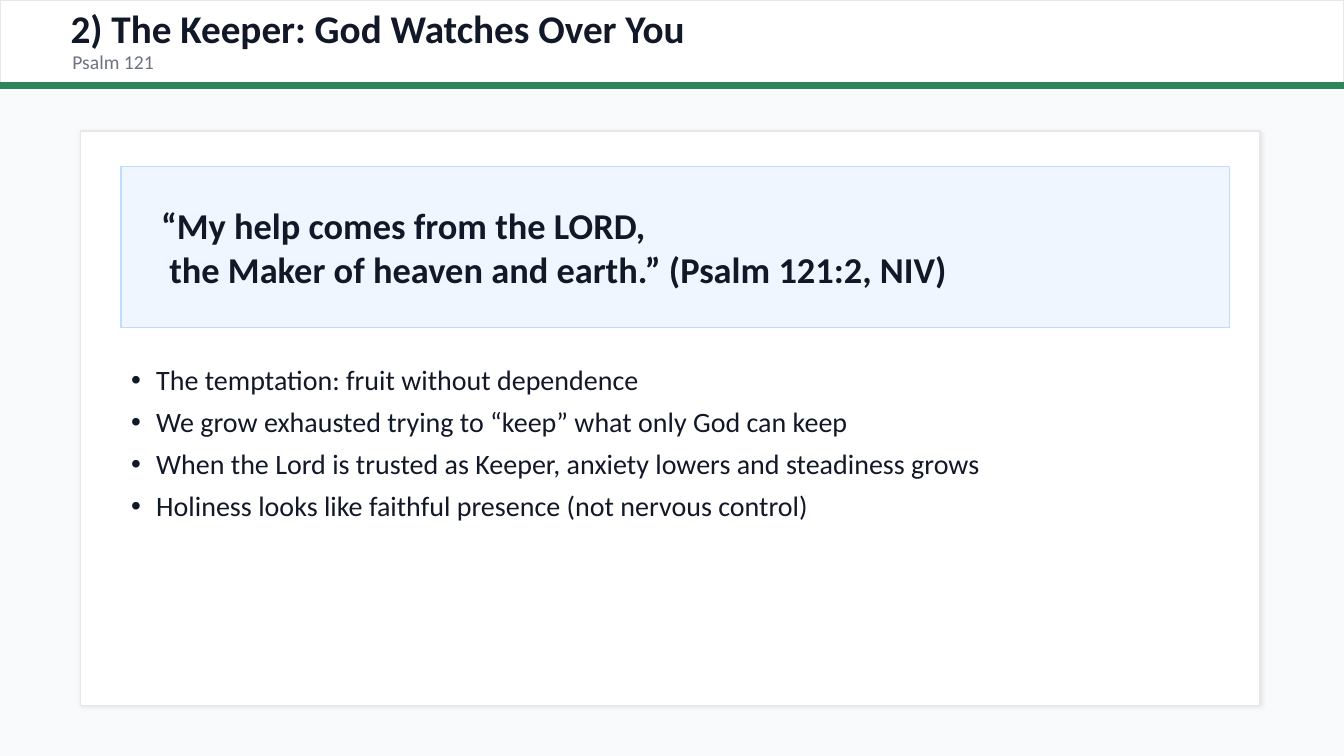
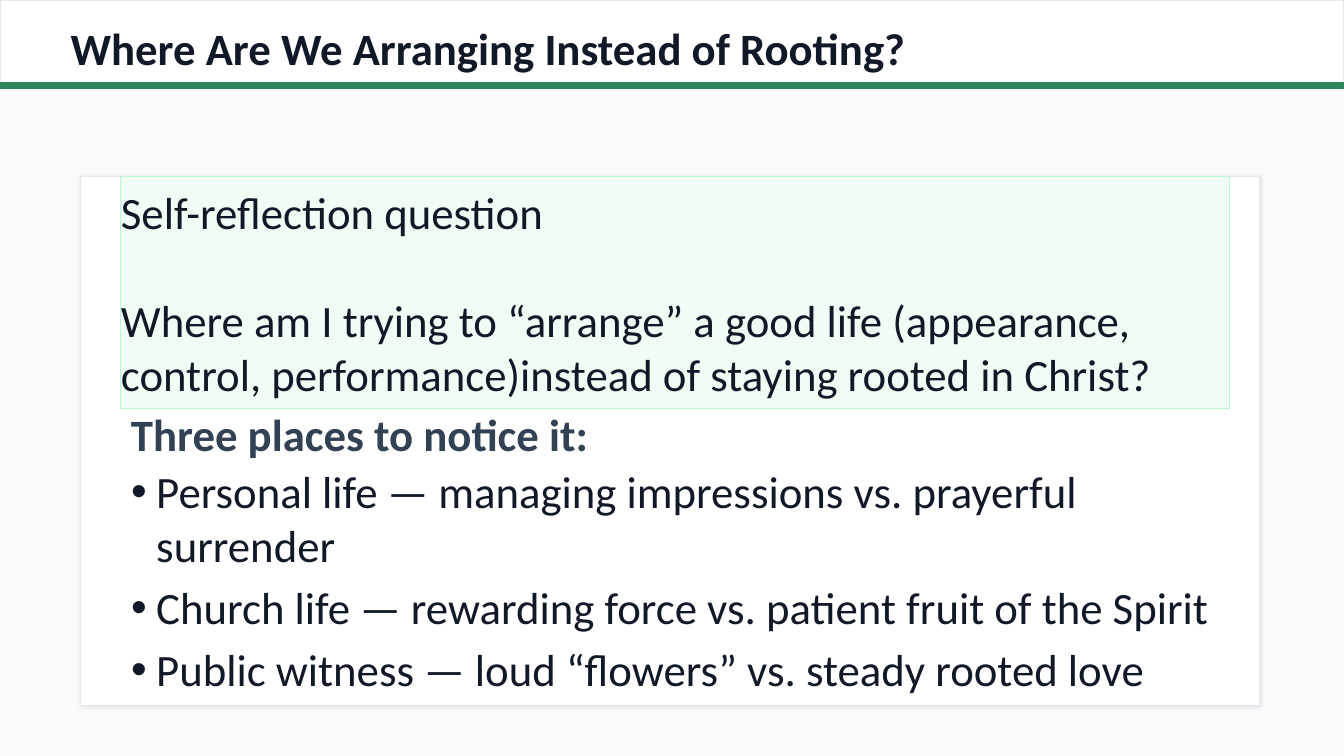
from lxml import etree
from pptx import Presentation
from pptx.dml.color import RGBColor
from pptx.enum.shapes import MSO_SHAPE
from pptx.enum.text import MSO_ANCHOR, MSO_AUTO_SIZE, PP_ALIGN
from pptx.oxml.ns import qn
from pptx.util import Pt

RECT = MSO_SHAPE.RECTANGLE
TOP, MIDDLE = MSO_ANCHOR.TOP, MSO_ANCHOR.MIDDLE
NO_FIT = MSO_AUTO_SIZE.NONE
LEFT = PP_ALIGN.LEFT

FONT = "Calibri"
WHITE = RGBColor(0xFF, 0xFF, 0xFF)
PAGE = RGBColor(0xF8, 0xFA, 0xFC)
BORDER = RGBColor(0xE5, 0xE7, 0xEB)
GREEN = RGBColor(0x2F, 0x85, 0x5A)
INK = RGBColor(0x11, 0x18, 0x27)
SLATE = RGBColor(0x33, 0x41, 0x55)
GREY = RGBColor(0x6B, 0x72, 0x80)
BLUE_TINT = RGBColor(0xEF, 0xF6, 0xFF)
BLUE_EDGE = RGBColor(0xBF, 0xDB, 0xFE)
GREEN_TINT = RGBColor(0xF0, 0xFD, 0xF4)
GREEN_EDGE = RGBColor(0xBB, 0xF7, 0xD0)

# Lengths in points
SLIDE_W, SLIDE_H = 960, 540
HEADER_H, RULE_H = 59, 4.3
CARD_X, CARD_W, CARD_BOTTOM = 57.6, 842.4, 504
INNER_X, INNER_W = 86.4, 792
BULLET_INDENT = 18
SPACE_WIDTH = 5.9
BLANK_LINE = 39

KEEPER = {
    "title": "2) The Keeper: God Watches Over You",
    "subtitle": "Psalm 121",
    "verse": ["“My help comes from the LORD,",
              "the Maker of heaven and earth.” (Psalm 121:2, NIV)"],
    "bullets": [
        "The temptation: fruit without dependence",
        "We grow exhausted trying to “keep” what only God can keep",
        "When the Lord is trusted as Keeper, anxiety lowers and steadiness grows",
        "Holiness looks like faithful presence (not nervous control)",
    ],
}
REFLECTION = {
    "title": "Where Are We Arranging Instead of Rooting?",
    "question": [
        "Self-reflection question",
        "Where am I trying to “arrange” a good life (appearance, control, "
        "performance)instead of staying rooted in Christ?",
    ],
    "heading": "Three places to notice it:",
    "bullets": [
        "Personal life — managing impressions vs. prayerful surrender",
        "Church life — rewarding force vs. patient fruit of the Spirit",
        "Public witness — loud “flowers” vs. steady rooted love",
    ],
}


def place(sp, x, y, w, h):
    sp.left, sp.top, sp.width, sp.height = Pt(x), Pt(y), Pt(w), Pt(h)


def set_text(sp, lines, size, color=INK, bold=False, anchor=MIDDLE):
    tf = sp.text_frame
    tf.text = "\n".join(lines)
    tf.word_wrap = True
    tf.auto_size = NO_FIT
    tf.vertical_anchor = anchor
    for p in tf.paragraphs:
        p.alignment = LEFT
        p.space_before = Pt(0)
        for r in p.runs:
            r.font.name = FONT
            r.font.size = Pt(size)
            r.font.bold = bold
            r.font.color.rgb = color
    return tf


def set_indent(p, left, first=0):
    pPr = p._p.get_or_add_pPr()
    pPr.set("marL", str(Pt(left)))
    pPr.set("indent", str(Pt(first)))


def add_rect(s, x, y, w, h, fill, line, line_width=1):
    sp = s.shapes.add_shape(RECT, Pt(x), Pt(y), Pt(w), Pt(h))
    sp.shadow.inherit = False
    sp.fill.solid()
    sp.fill.fore_color.rgb = fill
    sp.line.color.rgb = line
    sp.line.width = Pt(line_width)
    return sp


def add_text(s, x, y, w, h, lines, size, **style):
    sp = s.shapes.add_textbox(Pt(x), Pt(y), Pt(w), Pt(h))
    return set_text(sp, lines, size, **style)


def add_card(s, top):
    """White panel with a soft shadow, reaching down to the common bottom edge."""
    sp = add_rect(s, CARD_X, top, CARD_W, CARD_BOTTOM - top, WHITE, BORDER)
    effects = sp.element.spPr.find(qn("a:effectLst"))
    shadow = etree.SubElement(effects, qn("a:outerShdw"), blurRad=str(Pt(3)),
                              dist=str(Pt(1)), dir=str(45 * 60000))
    color = etree.SubElement(shadow, qn("a:srgbClr"), val="000000")
    etree.SubElement(color, qn("a:alpha"), val="10000")


def set_title(s, text, size, height):
    place(s.shapes.title, 43.2, 10, 873.4, height)
    set_text(s.shapes.title, [text], size, bold=True)


def set_bullets(s, lines, size, top, height):
    body = s.placeholders[1]
    place(body, INNER_X, top, INNER_W, height)
    for p in set_text(body, lines, size, anchor=TOP).paragraphs:
        set_indent(p, BULLET_INDENT, -BULLET_INDENT)
        p.space_after = Pt(6)
    body.element.getparent().append(body.element)  # in front of the card


def add_header_to_layout(layout, s):
    """Draw the header bands on s, then move them behind the layout's placeholders."""
    layout.background.fill.solid()
    layout.background.fill.fore_color.rgb = PAGE
    bands = [add_rect(s, 0, 0, SLIDE_W, HEADER_H, WHITE, BORDER),
             add_rect(s, 0, HEADER_H, SLIDE_W, RULE_H, GREEN, GREEN)]
    for i, sp in enumerate(bands):
        sp.element.nvSpPr.cNvPr.set("id", str(100 + i))
        layout.shapes.element.insert(2 + i, sp.element)


def build_keeper(s):
    set_title(s, KEEPER["title"], 28, 20.2)
    add_text(s, 44.6, 33.1, 870.5, 21.6, [KEEPER["subtitle"]], 14, color=GREY)
    add_card(s, 93.6)
    add_rect(s, INNER_X, 118.8, INNER_W, 115.2, BLUE_TINT, BLUE_EDGE)
    verse = add_text(s, 108, 133.2, 748.8, 86.4, KEEPER["verse"], 26, bold=True)
    set_indent(verse.paragraphs[1], SPACE_WIDTH)
    set_bullets(s, KEEPER["bullets"], 20, 255.6, 237.6)


def build_reflection(s):
    set_title(s, REFLECTION["title"], 32, 47.5)
    add_card(s, 126)
    box = add_rect(s, INNER_X, 126, INNER_W, 165.6, GREEN_TINT, GREEN_EDGE, 0.75)
    tf = set_text(box, REFLECTION["question"], 32)
    tf.margin_left = tf.margin_right = tf.margin_top = tf.margin_bottom = 0
    tf.paragraphs[1].space_before = Pt(BLANK_LINE)
    add_text(s, INNER_X, 298.8, INNER_W, 21.6, [REFLECTION["heading"]], 32,
             color=SLATE, bold=True)
    set_bullets(s, REFLECTION["bullets"], 32, 327.6, 194.4)


def main():
    prs = Presentation()
    prs.slide_width, prs.slide_height = Pt(SLIDE_W), Pt(SLIDE_H)
    layout = prs.slide_layouts[1]
    keeper, reflection = [prs.slides.add_slide(layout) for _ in range(2)]
    add_header_to_layout(layout, keeper)
    build_keeper(keeper)
    build_reflection(reflection)
    prs.save("out.pptx")


if __name__ == "__main__":
    main()
